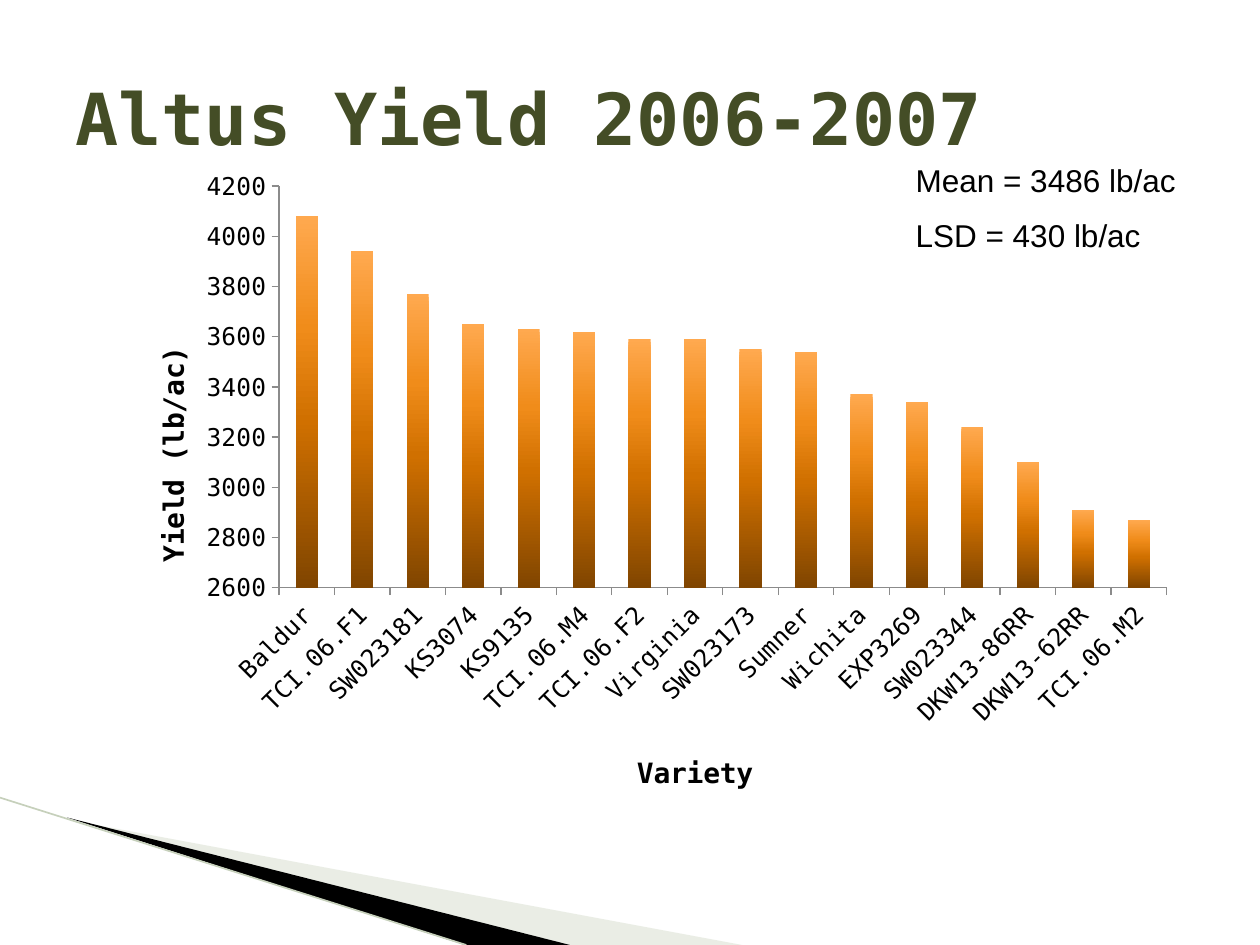
import pptx
import pptx.chart.data
import pptx.dml.color
import pptx.enum.chart
import pptx.enum.shapes
import pptx.enum.text
import pptx.oxml
import pptx.oxml.ns
import pptx.util
from lxml import etree

Cm = pptx.util.Cm
Pt = pptx.util.Pt
RGBColor = pptx.dml.color.RGBColor
qn = pptx.oxml.ns.qn

BLACK = RGBColor(0x00, 0x00, 0x00)
OLIVE = RGBColor(0x44, 0x4D, 0x26)
SAGE = RGBColor(0xCB, 0xD4, 0xC0)
PALE_SAGE = RGBColor(0xC6, 0xD0, 0xBB)
AXIS_GRAY = RGBColor(0x8B, 0x8B, 0x8B)
# Bar gradient from top to bottom: position in percent, colour
BAR_STOPS = [(0, "FFA94F"), (30, "F08C1A"), (55, "D07000"), (100, "804500")]

MONO = "DejaVu Sans Mono"
SANS = "Arial"

YIELDS = {
    "Baldur": 4080, "TCI.06.F1": 3940, "SW023181": 3770, "KS3074": 3650,
    "KS9135": 3630, "TCI.06.M4": 3620, "TCI.06.F2": 3590, "Virginia": 3590,
    "SW023173": 3550, "Sumner": 3540, "Wichita": 3370, "EXP3269": 3340,
    "SW023344": 3240, "DKW13-86RR": 3100, "DKW13-62RR": 2910, "TCI.06.M2": 2870,
}


class SlideBuilder:
    def __init__(self, slide):
        self.slide = slide

    def style_font(self, font, size, name=MONO, color=BLACK, bold=False):
        font.size = Pt(size)
        font.name = name
        font.bold = bold
        font.color.rgb = color

    def wedge(self, points, color, opacity=100):
        corners = [(Cm(x), Cm(y)) for x, y in points]
        builder = self.slide.shapes.build_freeform(*corners[0])
        builder.add_line_segments(corners[1:], close=True)
        shape = builder.convert_to_shape()
        shape.shadow.inherit = False
        shape.fill.solid()
        shape.fill.fore_color.rgb = color
        shape.line.fill.background()
        if opacity < 100:
            fill_color = shape.fill._xPr.find(".//" + qn("a:srgbClr"))
            etree.SubElement(fill_color, qn("a:alpha"), val=str(opacity * 1000))

    def line(self, start, end, color, width):
        connector = self.slide.shapes.add_connector(
            pptx.enum.shapes.MSO_CONNECTOR.STRAIGHT,
            *[Cm(value) for value in start + end])
        connector.line.color.rgb = color
        connector.line.width = Pt(width)
        etree.SubElement(connector._element.spPr, qn("a:effectLst"))

    def text(self, box, lines, size, name, color=BLACK, bold=False,
             anchor=pptx.enum.text.MSO_ANCHOR.TOP, gap=0):
        shape = self.slide.shapes.add_textbox(*[Cm(value) for value in box])
        frame = shape.text_frame
        frame.word_wrap = True
        frame.vertical_anchor = anchor
        frame.text = "\n".join(lines)
        for index, paragraph in enumerate(frame.paragraphs):
            self.style_font(paragraph.font, size, name, color, bold)
            if index:
                paragraph.space_before = Pt(gap)

    def place(self, element, index, inner=False, **fractions):
        """Give a chart part a manual layout, in fractions of the chart."""
        for old in element.findall(qn("c:layout")):
            element.remove(old)
        layout = etree.Element(qn("c:layout"))
        manual = etree.SubElement(layout, qn("c:manualLayout"))
        if inner:
            etree.SubElement(manual, qn("c:layoutTarget"), val="inner")
        for mode in ("xMode", "yMode"):
            etree.SubElement(manual, qn("c:" + mode), val="edge")
        for key, value in fractions.items():
            etree.SubElement(manual, qn("c:" + key), val=str(value))
        element.insert(index, layout)

    def axis(self, axis, title, x, y):
        axis.has_major_gridlines = False
        axis.major_tick_mark = pptx.enum.chart.XL_TICK_MARK.OUTSIDE
        axis.format.line.color.rgb = AXIS_GRAY
        self.style_font(axis.tick_labels.font, 14)
        frame = axis.axis_title.text_frame
        frame.text = title
        self.style_font(frame.paragraphs[0].font, 16, bold=True)
        self.place(axis.axis_title._element, 1, x=x, y=y)

    def column_chart(self, box, values):
        data = pptx.chart.data.CategoryChartData(number_format="0")
        data.categories = list(values)
        data.add_series("Series 1", list(values.values()))
        chart = self.slide.shapes.add_chart(
            pptx.enum.chart.XL_CHART_TYPE.COLUMN_CLUSTERED,
            *[Cm(value) for value in box], data).chart
        self.style_font(chart.font, 16)
        chart.has_title = False
        chart.has_legend = False

        # Axes
        self.axis(chart.category_axis, "Variety", x=0.48, y=0.91)
        self.axis(chart.value_axis, "Yield (lb/ac)", x=0.03, y=0.28)
        chart.value_axis.minimum_scale = 2600
        chart.value_axis.maximum_scale = 4200
        chart.value_axis.major_unit = 200
        labels = chart.category_axis._element.find(qn("c:txPr"))
        labels.find(qn("a:bodyPr")).set("rot", str(-45 * 60000))

        # Bars
        plot = chart.plots[0]
        plot.gap_width = 150
        plot.vary_by_categories = False
        fill = plot.series[0].format.fill
        fill.gradient()
        fill.gradient_angle = 270
        stops = fill._xPr.find(".//" + qn("a:gsLst"))
        for old in list(stops):
            stops.remove(old)
        for position, color in BAR_STOPS:
            stop = etree.SubElement(stops, qn("a:gs"), pos=str(position * 1000))
            etree.SubElement(stop, qn("a:srgbClr"), val=color)

        plot_area = chart._chartSpace.find(".//" + qn("c:plotArea"))
        self.place(plot_area, 0, inner=True, x=0.15, y=0.04, w=0.83, h=0.62)


def main():
    presentation = pptx.Presentation()
    presentation.slide_width = Cm(25.4)
    presentation.slide_height = Cm(19.05)
    slide = presentation.slides.add_slide(presentation.slide_layouts[6])
    builder = SlideBuilder(slide)

    # Corner decoration
    builder.wedge([(1.4, 16.53), (14.96, 19.05), (11.49, 19.05)], SAGE, opacity=40)
    builder.wedge([(1.35, 16.48), (11.49, 19.05), (9.37, 19.05)], BLACK)
    builder.line((0, 16.08), (9.4, 19.05), PALE_SAGE, 0.95)

    # Yield chart
    builder.column_chart((2.39, 3.23, 21.56, 13.06), YIELDS)

    # Title and statistics
    builder.text((1.27, 0.76, 22.86, 3.18), ["Altus Yield 2006-2007"], 41, MONO,
                 OLIVE, bold=True, anchor=pptx.enum.text.MSO_ANCHOR.MIDDLE)
    builder.text((18.21, 3.12, 5.99, 2.18), ["Mean = 3486 lb/ac", "LSD = 430 lb/ac"],
                 18, SANS, gap=10)

    presentation.save("out.pptx")


if __name__ == "__main__":
    main()
